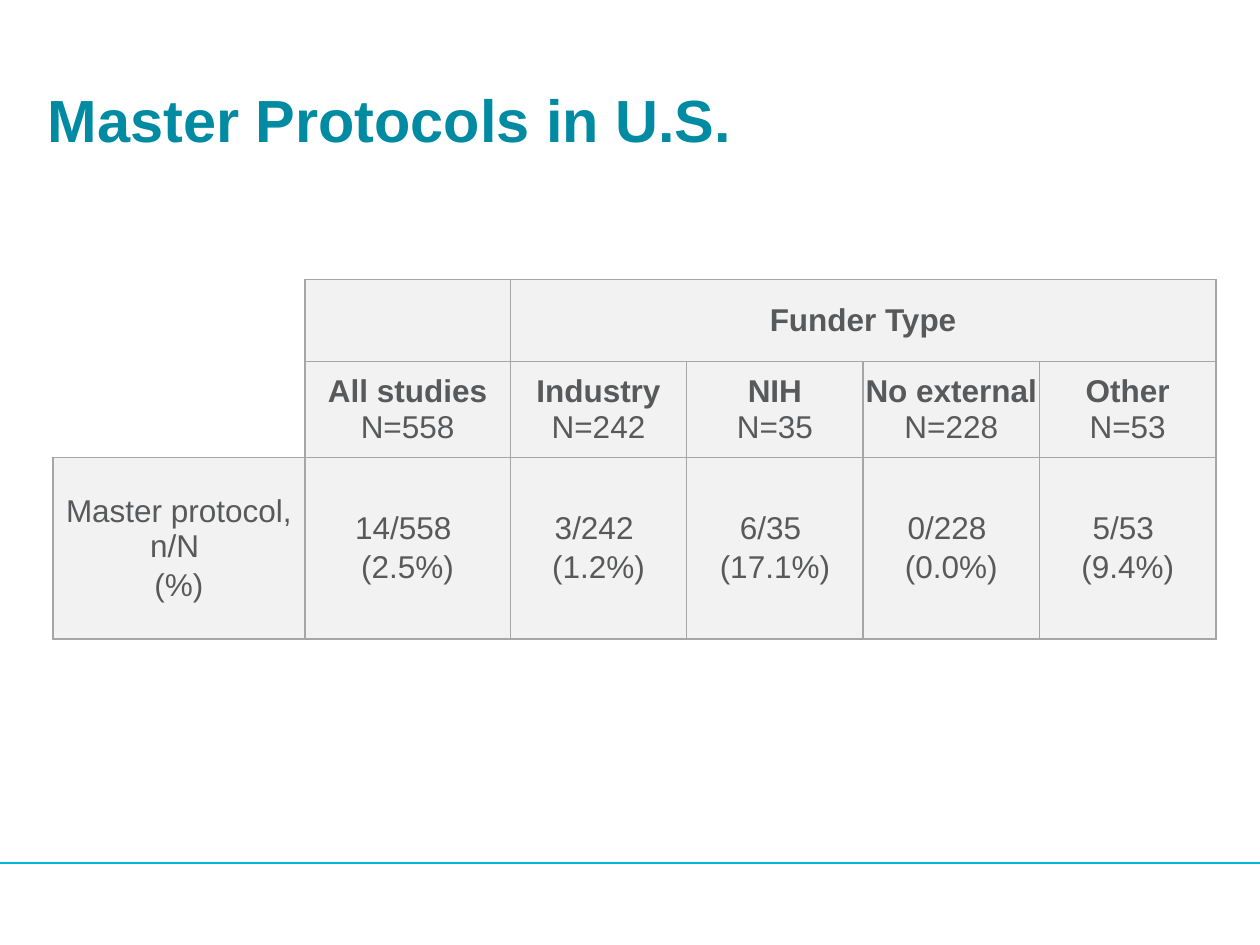
import lxml.etree
import pptx
import pptx.dml.color
import pptx.enum.shapes
import pptx.enum.text
import pptx.oxml.ns
import pptx.util

Inches = pptx.util.Inches
Pt = pptx.util.Pt

TEAL, CYAN, GREY = "008BA2", "00B7D5", "58595B"
WHITE, CELL_FILL, BORDER = "FFFFFF", "F2F2F2", "A6A6A6"
FONT = "Arial"

COLUMN_WIDTHS = [2, 1.63, 1.4, 1.4, 1.4, 1.4]
ROW_HEIGHTS = [0.65, 0.76, 1.44]
GROUPS = [
    ("All studies", "N=558", "14/558 ", "(2.5%)"),
    ("Industry", "N=242", "3/242 ", "(1.2%)"),
    ("NIH", "N=35", "6/35 ", "(17.1%)"),
    ("No external", "N=228", "0/228 ", "(0.0%)"),
    ("Other", "N=53", "5/53 ", "(9.4%)"),
]


def color(value):
    """Turn a hex string into a colour."""
    return pptx.dml.color.RGBColor.from_string(value)


def style_font(font, size, value, bold=None):
    """Set face, size, colour and weight of a font."""
    font.name = FONT
    font.size = Pt(size)
    font.color.rgb = color(value)
    font.bold = bold


def add_title(page, text):
    """Add the slide heading."""
    box = page.shapes.add_textbox(Inches(0.38), Inches(0.52), Inches(9.25), Inches(0.84))
    frame = box.text_frame
    frame.word_wrap = True
    frame.vertical_anchor = pptx.enum.text.MSO_ANCHOR.MIDDLE
    frame.margin_left = frame.margin_right = frame.margin_top = frame.margin_bottom = 0
    paragraph = frame.paragraphs[0]
    paragraph.text = text
    style_font(paragraph.font, 34, TEAL, True)


def add_footer(page):
    """Add the white footer band and its rule."""
    band = page.shapes.add_shape(
        pptx.enum.shapes.MSO_SHAPE.RECTANGLE, 0, Inches(6.83), Inches(10), Inches(0.67)
    )
    band.shadow.inherit = False
    band.fill.solid()
    band.fill.fore_color.rgb = color(WHITE)
    band.line.fill.background()
    rule = page.shapes.add_connector(
        pptx.enum.shapes.MSO_CONNECTOR.STRAIGHT, 0, Inches(6.85), Inches(10), Inches(6.85)
    )
    rule.line.color.rgb = color(CYAN)
    rule.line.width = Pt(0.75)
    properties = rule.element.spPr
    lxml.etree.SubElement(properties, pptx.oxml.ns.qn("a:effectLst"))


def set_borders(cell, hidden=""):
    """Draw the cell edges, leaving out the hidden sides."""
    qn = pptx.oxml.ns.qn
    properties = cell._tc.get_or_add_tcPr()
    for side in "LRTB":
        edge = lxml.etree.SubElement(properties, qn("a:ln" + side), w=str(Pt(1)))
        if side in hidden:
            lxml.etree.SubElement(edge, qn("a:noFill"))
        else:
            fill = lxml.etree.SubElement(edge, qn("a:solidFill"))
            lxml.etree.SubElement(fill, qn("a:srgbClr"), val=BORDER)


def write_cell(cell, lines, bold=False):
    """Write one centred paragraph per line."""
    frame = cell.text_frame
    frame.text = "\n".join(lines)
    for index, paragraph in enumerate(frame.paragraphs):
        paragraph.alignment = pptx.enum.text.PP_ALIGN.CENTER
        paragraph.space_before = Pt(1 if index else 0)
        paragraph.space_after = Pt(1)
        style_font(paragraph.font, 18, GREY, bold)


def write_group_header(cell, name, count):
    """Write a bold group name above its plain count."""
    write_cell(cell, [name], True)
    paragraph = cell.text_frame.paragraphs[0]
    paragraph.add_line_break()
    span = paragraph.add_run()
    span.text = count
    span.font.bold = False


def format_cell(cell, corner):
    """Set borders, fill and margins of a cell."""
    set_borders(cell, "LT" if corner else "")
    if corner:
        cell.fill.background()
    else:
        cell.fill.solid()
        cell.fill.fore_color.rgb = color(CELL_FILL)
    cell.vertical_anchor = pptx.enum.text.MSO_ANCHOR.MIDDLE
    cell.margin_left = cell.margin_right = Inches(0.01)
    cell.margin_top = cell.margin_bottom = 0


def add_funder_table(page):
    """Add the table of master protocols by funder type."""
    rows, columns = len(ROW_HEIGHTS), len(COLUMN_WIDTHS)
    table = page.shapes.add_table(
        rows, columns, Inches(0.42), Inches(2.22),
        Inches(sum(COLUMN_WIDTHS)), Inches(sum(ROW_HEIGHTS)),
    ).table
    table.first_row = table.horz_banding = False
    for column, width in zip(table.columns, COLUMN_WIDTHS):
        column.width = Inches(width)
    for row, height in zip(table.rows, ROW_HEIGHTS):
        row.height = Inches(height)
    for row in range(rows):
        for column in range(columns):
            format_cell(table.cell(row, column), column == 0 and row < 2)
    table.cell(0, 0).merge(table.cell(1, 0))
    table.cell(0, 2).merge(table.cell(0, columns - 1))
    write_cell(table.cell(0, 2), ["Funder Type"], True)
    write_cell(table.cell(2, 0), ["Master protocol, n/N ", "(%)"])
    for column, (name, count, ratio, percent) in enumerate(GROUPS, 1):
        write_group_header(table.cell(1, column), name, count)
        write_cell(table.cell(2, column), [ratio, percent])


def main():
    """Build and save the slide."""
    deck = pptx.Presentation()
    deck.slide_width = Inches(10)
    deck.slide_height = Inches(7.5)
    page = deck.slides.add_slide(deck.slide_layouts[6])
    add_footer(page)
    add_title(page, "Master Protocols in U.S.")
    add_funder_table(page)
    deck.save("out.pptx")


if __name__ == "__main__":
    main()
